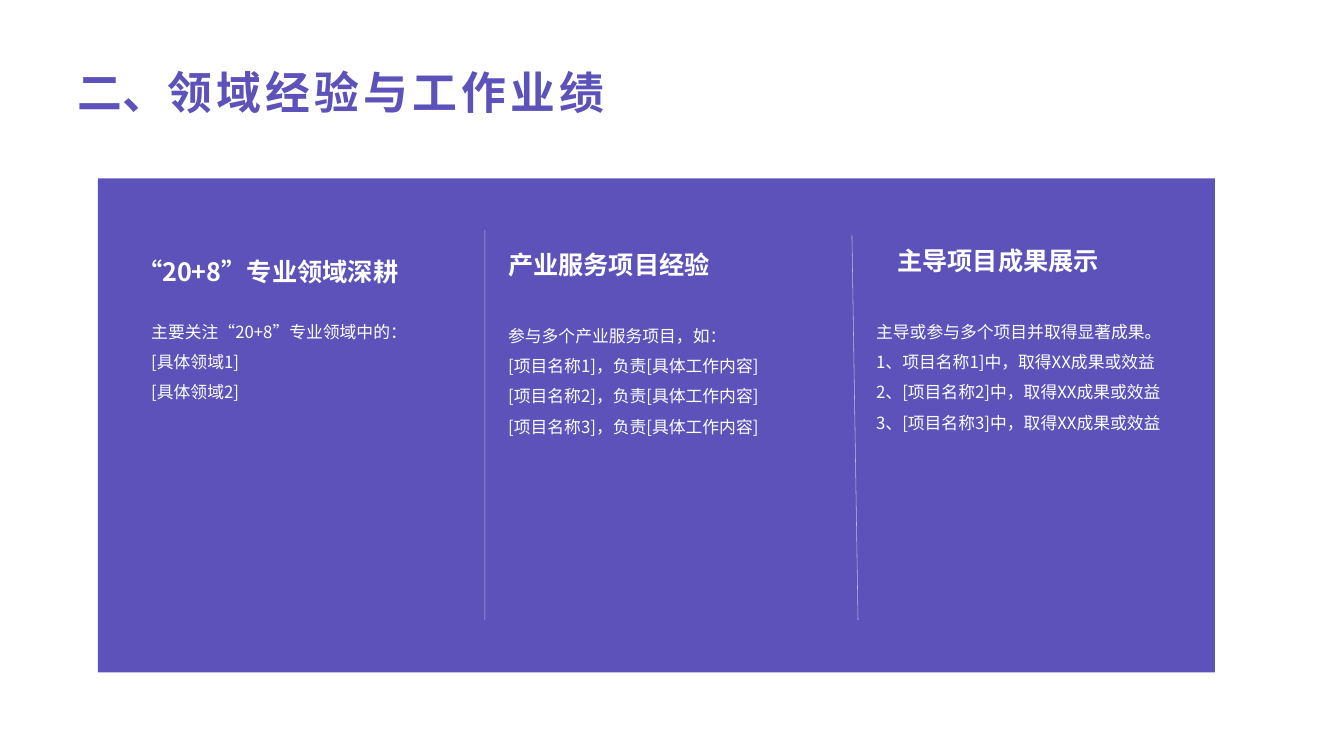
"""Build a slide with three columns on domain experience and work results."""
from lxml import etree
from pptx import Presentation
from pptx.dml.color import RGBColor
from pptx.enum.shapes import MSO_CONNECTOR, MSO_SHAPE
from pptx.enum.text import MSO_ANCHOR, MSO_AUTO_SIZE, PP_ALIGN
from pptx.oxml.ns import qn
from pptx.util import Inches, Pt

RECTANGLE = MSO_SHAPE.RECTANGLE
STRAIGHT = MSO_CONNECTOR.STRAIGHT
TOP, BOTTOM = MSO_ANCHOR.TOP, MSO_ANCHOR.BOTTOM
LEFT, JUSTIFY = PP_ALIGN.LEFT, PP_ALIGN.JUSTIFY
NO_AUTOFIT = MSO_AUTO_SIZE.NONE
COLORS = {"purple": "5C52BA", "white": "FFFFFF"}
CHINESE_FONT = "Noto Sans CJK SC"
TITLE_ONLY = 5
DIVIDER_BOTTOM = 6.15


def add_run(paragraph, text, size=12, color="white", font=CHINESE_FONT, bold=False, spacing=0):
    """Add a formatted run; spacing is in points."""
    run = paragraph.add_run()
    run.text = text
    run.font.size = Pt(size)
    run.font.bold = bold
    run.font.name = font
    run.font.color.rgb = RGBColor.from_string(COLORS[color])
    properties = run.font._element
    properties.set("lang", "zh-CN")
    properties.set("spc", str(spacing * 100))
    etree.SubElement(properties, qn("a:ea")).set("typeface", font)


def prepare_frame(shape, anchor):
    """Strip the margins of a text shape and return its frame."""
    frame = shape.text_frame
    frame.word_wrap = True
    frame.auto_size = NO_AUTOFIT
    frame.vertical_anchor = anchor
    frame.margin_left = frame.margin_right = frame.margin_top = frame.margin_bottom = 0
    return frame


presentation = Presentation()
presentation.slide_width = Inches(13.33)
presentation.slide_height = Inches(7.5)
slide = presentation.slides.add_slide(presentation.slide_layouts[TITLE_ONLY])

title = slide.shapes.title
title.left, title.top, title.width, title.height = map(Inches, (0.77, 0.39, 11.8, 0.79))
title_paragraph = prepare_frame(title, BOTTOM).paragraphs[0]
title_paragraph.alignment = LEFT
add_run(title_paragraph, "二、", size=32, color="purple", font="Arial", bold=True)
add_run(title_paragraph, "领域经验与工作业绩", size=32, color="purple", bold=True, spacing=3)

panel = slide.shapes.add_shape(RECTANGLE, *map(Inches, (0.97, 1.77, 11.08, 4.9)))
panel.shadow.inherit = False
panel.fill.solid()
panel.fill.fore_color.rgb = RGBColor.from_string(COLORS["purple"])
panel.line.fill.background()

for start_x, start_y, end_x in [(4.81, 2.28, 4.81), (8.45, 2.33, 8.51)]:
    divider = slide.shapes.add_connector(
        STRAIGHT, *map(Inches, (start_x, start_y, end_x, DIVIDER_BOTTOM)))
    divider.line.width = Pt(0.4)
    divider.line.color.rgb = RGBColor.from_string(COLORS["white"])
    properties = divider._element.spPr
    color_element = properties.find(".//" + qn("a:srgbClr"))
    etree.SubElement(color_element, qn("a:alpha")).set("val", "60000")
    etree.SubElement(properties, qn("a:effectLst"))

columns = [
    ("“20+8”专业领域深耕", (1.36, 2.28), (1.5, 3.09, 2.92, 3.06),
     ["主要关注“20+8”专业领域中的："]
     + [f"[具体领域{number}]" for number in (1, 2)]),
    ("产业服务项目经验", (5.04, 2.21), (5.04, 3.13, 2.93, 3.3),
     ["参与多个产业服务项目，如："]
     + [f"[项目名称{number}]，负责[具体工作内容]" for number in (1, 2, 3)]),
    ("主导项目成果展示", (8.9, 2.17), (8.69, 3.09, 3.13, 1.5),
     ["主导或参与多个项目并取得显著成果。", "1、项目名称1]中，取得XX成果或效益"]
     + [f"{number}、[项目名称{number}]中，取得XX成果或效益" for number in (2, 3)]),
]
for heading, heading_place, body_box, lines in columns:
    body = slide.shapes.add_textbox(*map(Inches, body_box))
    body_frame = prepare_frame(body, TOP)
    for index, line in enumerate(lines):
        paragraph = body_frame.add_paragraph() if index else body_frame.paragraphs[0]
        paragraph.alignment = JUSTIFY
        paragraph.line_spacing = 1.5
        add_run(paragraph, line)
    heading_box = slide.shapes.add_textbox(*map(Inches, (*heading_place, 2.93, 0.56)))
    add_run(prepare_frame(heading_box, BOTTOM).paragraphs[0], heading, size=18, bold=True)

presentation.save("out.pptx")
